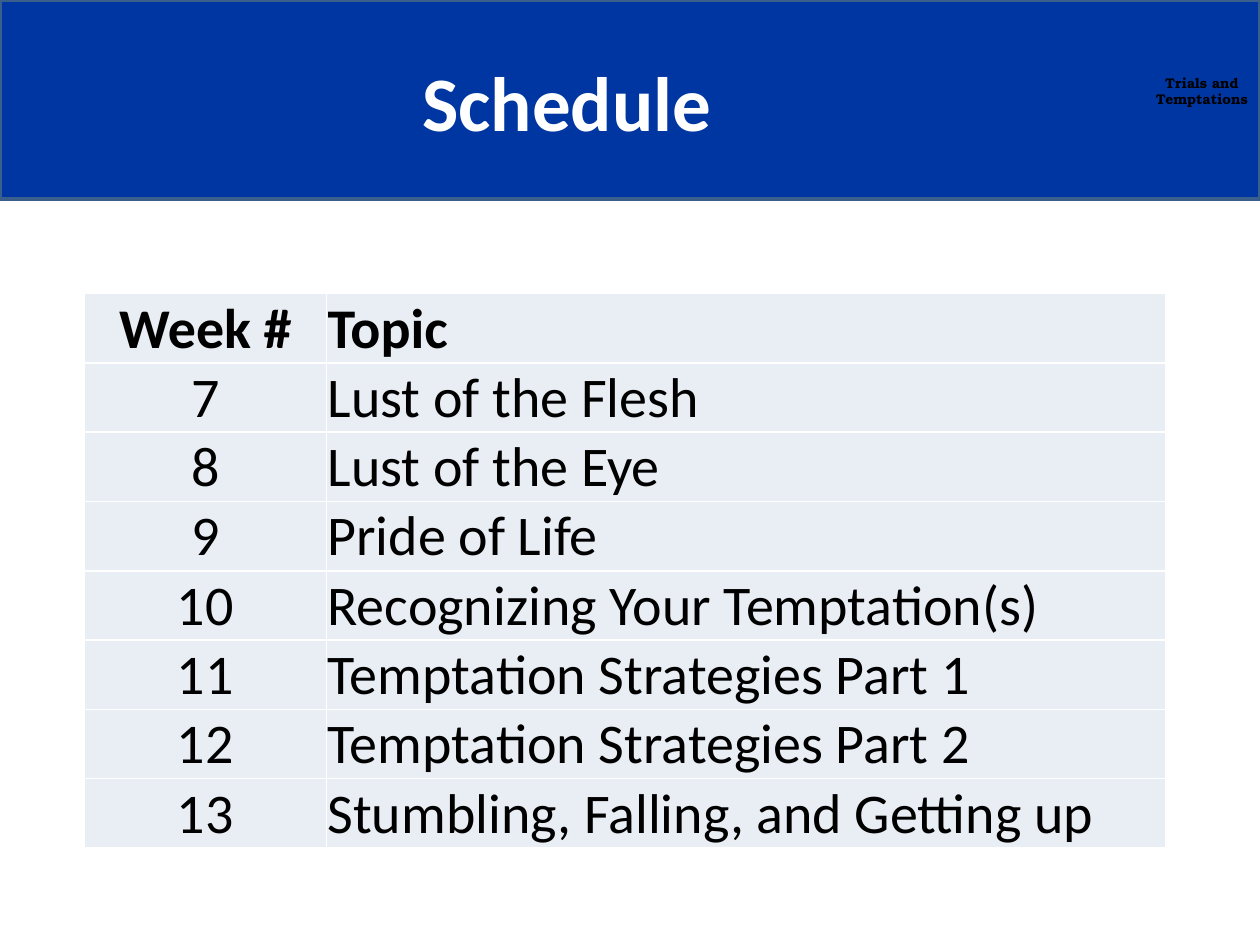
from dataclasses import dataclass

from lxml import etree
from pptx import Presentation
from pptx import util as u
from pptx.dml.color import RGBColor
from pptx.enum import shapes, text
from pptx.oxml import ns


@dataclass(frozen=True)
class Theme:
    banner: str = "0036A2"
    outline: str = "3A5F8C"
    cell: str = "E9EDF4"
    white: str = "FFFFFF"
    ink: str = "000000"
    body_font: str = "Calibri"
    label_font: str = "TeX Gyre Bonum"
    title_size: int = 44
    table_size: int = 32
    label_size: int = 8


CENTER, LEFT = text.PP_ALIGN.CENTER, text.PP_ALIGN.LEFT
TOP, MIDDLE, BOTTOM = (text.MSO_ANCHOR.TOP, text.MSO_ANCHOR.MIDDLE,
                       text.MSO_ANCHOR.BOTTOM)

SCHEDULE = [
    ("Week #", "Topic"),
    ("7", "Lust of the Flesh"),
    ("8", "Lust of the Eye"),
    ("9", "Pride of Life"),
    ("10", "Recognizing Your Temptation(s)"),
    ("11", "Temptation Strategies Part 1"),
    ("12", "Temptation Strategies Part 2"),
    ("13", "Stumbling, Falling, and Getting up"),
]


class SlideBuilder:
    def __init__(self, s, theme):
        self.s = s
        self.theme = theme

    def set_text(self, tf, words, size, color, font, bold, align):
        tf.text = words
        for p in tf.paragraphs:
            p.alignment = align
            for r in p.runs:
                r.font.name = font
                r.font.size = u.Pt(size)
                r.font.bold = bold
                r.font.color.rgb = RGBColor.from_string(color)

    def banner(self, box):
        sp = self.s.shapes.add_shape(shapes.MSO_SHAPE.RECTANGLE,
                                     *map(u.Inches, box))
        sp.shadow.inherit = False
        sp.fill.solid()
        sp.fill.fore_color.rgb = RGBColor.from_string(self.theme.banner)
        sp.line.color.rgb = RGBColor.from_string(self.theme.outline)
        sp.line.width = u.Pt(2)

    def textbox(self, box, words, size, color, font, anchor):
        tf = self.s.shapes.add_textbox(*map(u.Inches, box)).text_frame
        tf.word_wrap = True
        tf.vertical_anchor = anchor
        self.set_text(tf, words, size, color, font, True, CENTER)

    def borders(self, cell):
        tcPr = cell._tc.get_or_add_tcPr()
        for side in ("lnL", "lnR", "lnT", "lnB"):
            ln = etree.SubElement(tcPr, ns.qn(f"a:{side}"), w=str(u.Pt(1)))
            fill = etree.SubElement(ln, ns.qn("a:solidFill"))
            etree.SubElement(fill, ns.qn("a:srgbClr"), val=self.theme.white)

    def table(self, left, top, widths, row_height, rows):
        t = self.theme
        tbl = self.s.shapes.add_table(
            len(rows), len(widths), u.Inches(left), u.Inches(top),
            u.Inches(sum(widths)), u.Inches(row_height * len(rows))).table
        for col, width in zip(tbl.columns, widths):
            col.width = u.Inches(width)
        for i, row in enumerate(rows):
            tbl.rows[i].height = u.Inches(row_height)
            for j, words in enumerate(row):
                cell = tbl.cell(i, j)
                self.borders(cell)
                cell.fill.solid()
                cell.fill.fore_color.rgb = RGBColor.from_string(t.cell)
                cell.margin_left = cell.margin_right = u.Inches(0.01)
                cell.margin_top, cell.margin_bottom = u.Inches(0.01), 0
                cell.vertical_anchor = BOTTOM
                self.set_text(cell.text_frame, words, t.table_size, t.ink,
                              t.body_font, i == 0, LEFT if j else CENTER)


def main():
    prs = Presentation()
    prs.slide_width, prs.slide_height = u.Inches(10), u.Inches(7.5)
    theme = Theme()
    b = SlideBuilder(prs.slides.add_slide(prs.slide_layouts[6]), theme)
    b.banner((0, 0, 10, 1.58))
    b.textbox((8.99, 0.54, 1.1, 0.37), "Trials and\vTemptations",
              theme.label_size, theme.ink, theme.label_font, TOP)
    b.textbox((0, 0.17, 9, 1.25), "Schedule",
              theme.title_size, theme.white, theme.body_font, MIDDLE)
    b.table(0.67, 2.33, (1.92, 6.66), 0.55, SCHEDULE)
    prs.save("out.pptx")


if __name__ == "__main__":
    main()
